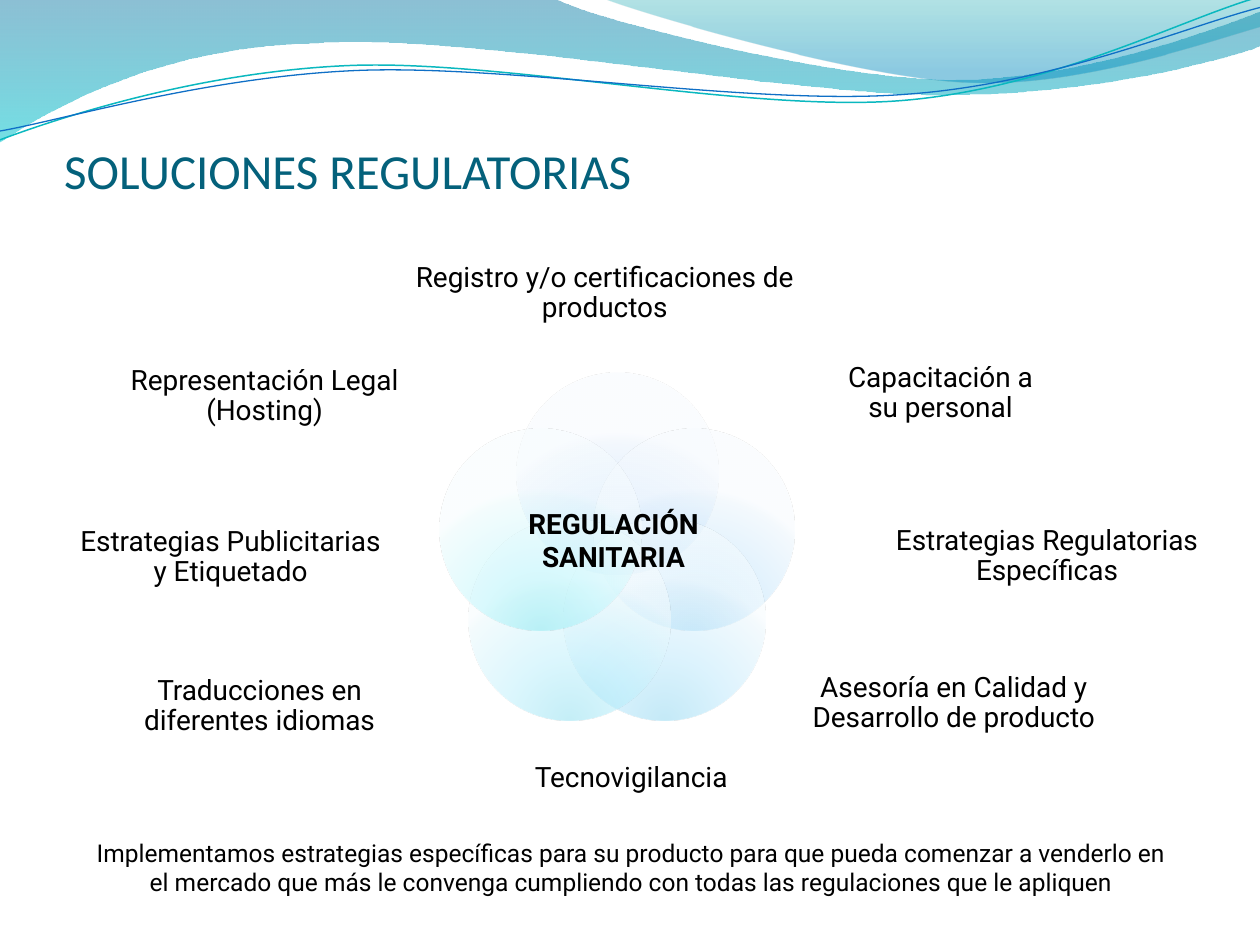
import math
from collections import namedtuple
from lxml import etree
from pptx import Presentation
from pptx import util as u
from pptx.dml.color import RGBColor
from pptx.enum import shapes as sh, text as tx
from pptx.oxml.ns import qn

Inches = u.Inches
Box = namedtuple("Box", "left top width height")


class Theme:
    title = "04617B"
    ink = "000000"
    teal, blue = "0AB8BF", "0F6FC6"
    head, body = "Calibri", "Roboto"
    big, mid, small = 28, 16, 14
    # Gradient stops: position, colour, opacity in percent
    wave = [(0, "0074A1", 45), (100, "00C6CF", 55)]
    crest = [(0, "00A1A9", 30), (80, "008BBF", 45)]
    petals = [
        ("8BC2F1", "B9DBFD", "EAF3FE", "F8FBFF"),
        ("8BCCF1", "B9E2FD", "EAF5FE", "F8FCFF"),
        ("8BD6F1", "B9E8FD", "EAF7FE", "F8FDFF"),
        ("8BDFF1", "B9F0FD", "EAFAFE", "F8FDFF"),
        ("8BE9F1", "B9F7FD", "EAFCFE", "F8FEFF"),
    ]


def add_text(slide, words, box, size=Theme.mid, font=Theme.body, color=Theme.ink,
             bold=False, align=tx.PP_ALIGN.CENTER, anchor=tx.MSO_ANCHOR.TOP,
             inset=None, spacing=None):
    frame = slide.shapes.add_textbox(*map(Inches, box)).text_frame
    frame.word_wrap = True
    frame.vertical_anchor = anchor
    if inset is not None:
        frame.margin_left = frame.margin_right = frame.margin_bottom = 0
        frame.margin_top = Inches(inset)
    para = frame.paragraphs[0]
    para.alignment = align
    if spacing:
        para.line_spacing = spacing
    run = para.add_run()
    run.text = words
    run.font.size = u.Pt(size)
    run.font.name = font
    run.font.bold = bold
    run.font.color.rgb = RGBColor.from_string(color)


def shade(shape, stops, radial=False):
    """Fill with a translucent gradient: downward, or from a focus below."""
    shape.shadow.inherit = False
    shape.line.fill.background()
    grad = etree.Element(qn("a:gradFill"), rotWithShape="1")
    items = etree.SubElement(grad, qn("a:gsLst"))
    for pos, color, alpha in stops:
        stop = etree.SubElement(items, qn("a:gs"), pos=str(pos * 1000))
        tint = etree.SubElement(stop, qn("a:srgbClr"), val=color)
        etree.SubElement(tint, qn("a:alpha"), val=str(alpha * 1000))
    if radial:
        way = etree.SubElement(grad, qn("a:path"), path="circle")
        etree.SubElement(way, qn("a:fillToRect"), l="50000", t="130000",
                         r="50000", b="-30000")
    else:
        etree.SubElement(grad, qn("a:lin"), ang="5400000", scaled="1")
    shape._element.spPr.insert(2, grad)


def spin(point, hub, angle):
    """Turn a point clockwise about a hub, in degrees."""
    dx, dy = point[0] - hub[0], point[1] - hub[1]
    cos, sin = math.cos(math.radians(angle)), math.sin(math.radians(angle))
    return hub[0] + dx * cos - dy * sin, hub[1] + dx * sin + dy * cos


def add_path(slide, box, start, parts, close=True, hub=(0, 0), tilt=0):
    """Draw straight parts (2 numbers) and Bézier parts (6 numbers)."""
    flat = [*start, *(n for part in parts for n in part)]
    points = [spin(p, hub, -tilt) for p in zip(flat[::2], flat[1::2])]
    points = [(Inches(box.left + x), Inches(box.top + y)) for x, y in points]
    maker = slide.shapes.build_freeform(*points[0], scale=1.0)
    maker.add_line_segments(points[1:], close=close)
    shape = maker.convert_to_shape()
    shape.rotation = tilt % 360

    # Join the three points of each Bézier part into one curve
    steps = iter(list(shape._element.iter(qn("a:lnTo"))))
    for part in parts:
        first = next(steps)
        if len(part) == 6:
            first.tag = qn("a:cubicBezTo")
            for step in (next(steps), next(steps)):
                first.append(step[0])
                step.getparent().remove(step)
    return shape


def add_waves(slide, box):
    # Filled bands
    bands = [
        (Theme.wave, (0, 0), [
            (4.4, -0.01), (4.76, 0.17, 6.64, 0.63, 7.58, 0.63),
            (8.53, 0.63, 9.58, 0.26, 10, 0.09), (10.01, 0.36),
            (9.83, 0.44, 8.7, 0.76, 7.46, 0.75),
            (6.22, 0.75, 3.82, 0.28, 2.57, 0.34),
            (1.29, 0.36, 0.46, 0.83, -0.01, 1.13), (0, 0)]),
        (Theme.crest, (4.79, -0.01), [
            (5.09, 0.11, 6.82, 0.62, 7.69, 0.65),
            (8.56, 0.69, 9.61, 0.32, 10, 0.21), (10, 0), (4.79, -0.01)]),
    ]
    for stops, start, parts in bands:
        shade(add_path(slide, box, start, parts), stops)

    # Thin tilted lines
    lines = [
        (Theme.teal, 0.85, (4.99, 0.58), (0, 1.11), [
            (0.48, 0.93, 1.58, 0.57, 2.77, 0.52),
            (3.95, 0.47, 5.93, 0.89, 7.13, 0.8),
            (8.33, 0.71, 9.38, 0.15, 9.98, -0.02)]),
        (Theme.blue, 0.75, (5, 0.59), (0, 1.04), [
            (0.47, 0.96, 1.64, 0.61, 2.83, 0.56),
            (4.03, 0.51, 5.97, 0.84, 7.17, 0.75),
            (8.36, 0.67, 9.41, 0.21, 10, 0.06)]),
    ]
    for color, width, hub, start, parts in lines:
        line = add_path(slide, box, start, parts, close=False, hub=hub, tilt=-2.7)
        line.shadow.inherit = False
        line.fill.background()
        line.line.color.rgb = RGBColor.from_string(color)
        line.line.width = u.Pt(width)


def add_flower(slide, box, size=1.6, reach=0.64):
    # Five petals, clockwise from the top
    mid_x = box.left + box.width / 2
    mid_y = box.top + size / 2 + reach
    for i, colors in enumerate(Theme.petals):
        turn = math.tau * i / len(Theme.petals)
        left = mid_x + reach * math.sin(turn) - size / 2
        top = mid_y - reach * math.cos(turn) - size / 2
        petal = slide.shapes.add_shape(sh.MSO_SHAPE.OVAL, Inches(left), Inches(top),
                                       Inches(size), Inches(size))
        shade(petal, [(pos, color, 50) for pos, color in zip((0, 43, 93, 100), colors)],
              radial=True)
    add_text(slide, "REGULACIÓN SANITARIA", Box(mid_x - 1.33, mid_y - 0.43, 2.6, 0.64),
             bold=True)


def add_labels(slide, box):
    # Left, top, width and height within the box
    labels = [
        ("Registro y/o certificaciones de productos", 2.59, 0, 3.2, 1.08),
        ("Capacitación a su personal", 6.02, 0.75, 1.67, 1.17),
        ("Asesoría en Calidad y Desarrollo de producto", 5.68, 3.21, 2.56, 1.17),
        ("Traducciones en diferentes idiomas", 0.36, 3.23, 2.18, 1.17),
        ("Estrategias Publicitarias y Etiquetado", 0, 2.05, 2.44, 1.17),
        ("Representación Legal (Hosting)", 0.37, 0.77, 2.24, 1.17),
        ("Estrategias Regulatorias Específicas", 6.5, 2.04, 2.4, 1.17),
        ("Tecnovigilancia", 3.12, 3.8, 2.56, 1.17),
    ]
    for words, left, top, width, height in labels:
        add_text(slide, words, Box(box.left + left, box.top + top, width, height),
                 anchor=tx.MSO_ANCHOR.MIDDLE, inset=0, spacing=0.9)


def main():
    deck = Presentation()
    deck.slide_width, deck.slide_height = Inches(10), Inches(7.5)
    slide = deck.slides.add_slide(deck.slide_layouts[6])

    add_waves(slide, Box(0, 0, 10, 1.13))
    add_text(slide, "Implementamos estrategias específicas para su producto para que "
             "pueda comenzar a venderlo en el mercado que más le convenga cumpliendo "
             "con todas las regulaciones que le apliquen",
             Box(0.64, 6.6, 8.74, 0.57), size=Theme.small)
    add_flower(slide, Box(3.49, 2.96, 2.82, 2.76))
    add_labels(slide, Box(0.61, 1.79, 8.9, 4.97))
    add_text(slide, "SOLUCIONES REGULATORIAS", Box(0.51, 0.33, 9, 1.25),
             size=Theme.big, font=Theme.head, color=Theme.title,
             align=tx.PP_ALIGN.LEFT, anchor=tx.MSO_ANCHOR.BOTTOM, inset=0.05)

    deck.save("out.pptx")


if __name__ == "__main__":
    main()
